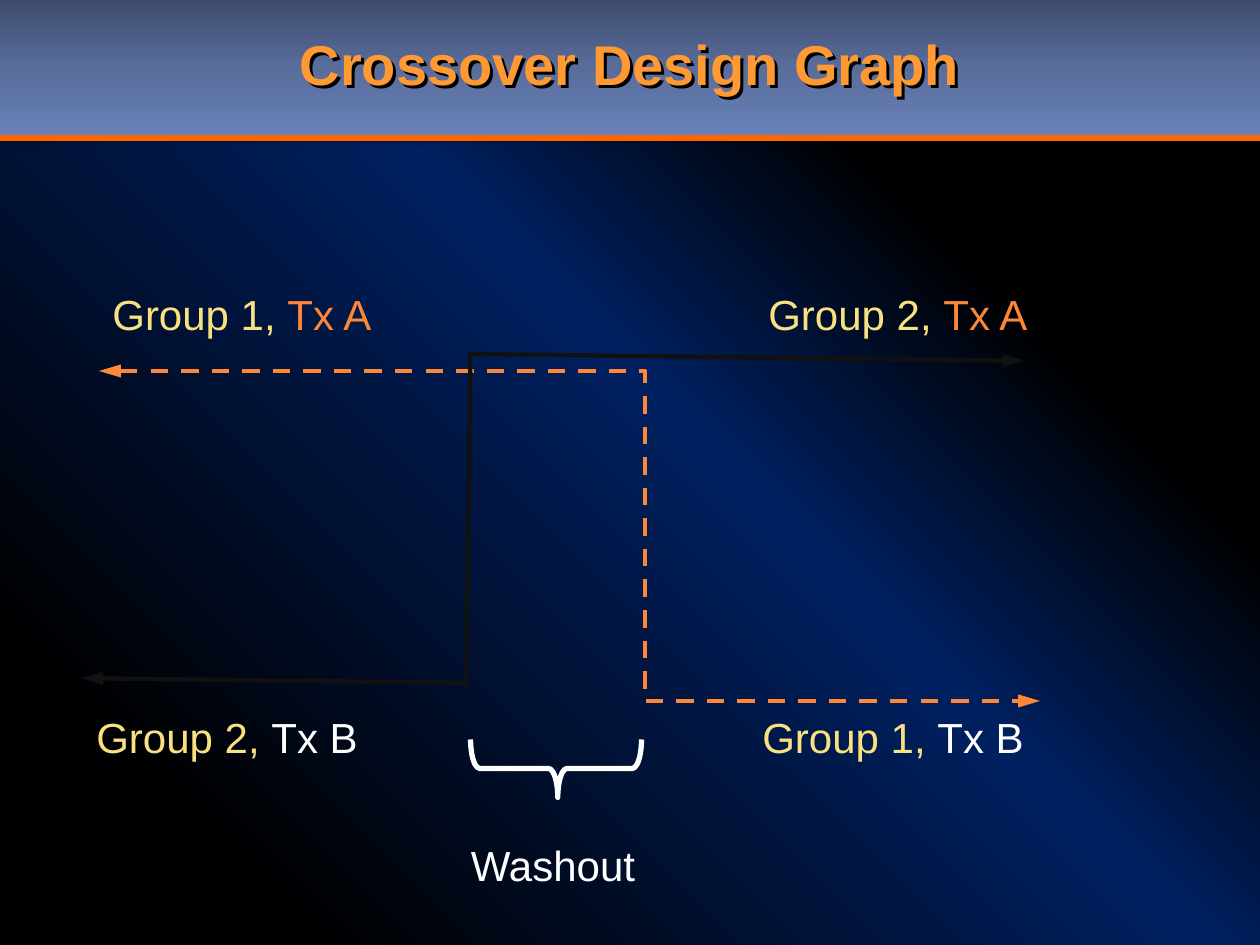
from dataclasses import dataclass

from lxml import etree
from pptx import Presentation
from pptx.dml.color import RGBColor
from pptx.enum.dml import MSO_LINE
from pptx.enum.shapes import MSO_CONNECTOR, MSO_SHAPE
from pptx.enum.text import MSO_ANCHOR, PP_ALIGN
from pptx.oxml import parse_xml
from pptx.oxml.ns import nsdecls, qn
from pptx.util import Emu, Pt

DASH = MSO_LINE.DASH
ELBOW, STRAIGHT = MSO_CONNECTOR.ELBOW, MSO_CONNECTOR.STRAIGHT
RECTANGLE, BRACE = MSO_SHAPE.RECTANGLE, MSO_SHAPE.RIGHT_BRACE
MIDDLE, TOP = MSO_ANCHOR.MIDDLE, MSO_ANCHOR.TOP
CENTER, LEFT = PP_ALIGN.CENTER, PP_ALIGN.LEFT
EMU_PER_PX = 914400 / 126


@dataclass(frozen=True)
class Theme:
    """Colours, gradients, font and type sizes of the slide."""
    font: str = "Arial"
    title_size: int = 32
    label_size: int = 24
    title: str = "FF9933"
    rule: str = "FF6600"
    group: str = "F9E181"
    orange: str = "FE8637"
    white: str = "FFFFFF"
    dark: str = "111111"
    background: tuple = ((14, "000000"), (55, "002060"), (75, "000000"))
    band: tuple = ((0, "3E4D6E"), (50, "596D9C"), (100, "6982B9"))


def px(value):
    """Turn a length in px into EMU."""
    return Emu(round(value * EMU_PER_PX))


def apply(target, values):
    """Set every attribute named in values on target."""
    for name, value in values.items():
        setattr(target, name, value)


def shadow_xml(blur, distance, angle, opacity):
    """Return an effect list with one black outer shadow."""
    return parse_xml(
        f'<a:effectLst {nsdecls("a")}><a:outerShdw blurRad="{Pt(blur)}" '
        f'dist="{Pt(distance)}" dir="{angle * 60000}" algn="tl" rotWithShape="0">'
        f'<a:srgbClr val="000000"><a:alpha val="{opacity * 1000}"/></a:srgbClr>'
        '</a:outerShdw></a:effectLst>')


class SlideBuilder:
    """Draws styled elements on the current slide."""

    def __init__(self, slide, theme):
        """Keep the slide and its theme."""
        self.slide, self.theme = slide, theme

    def gradient(self, fill, owner, stops, angle):
        """Give a fill a linear gradient with any number of stops."""
        fill.gradient()
        fill.gradient_angle = angle
        stop_list = next(owner.iter(qn("a:gsLst")))
        for stop in list(stop_list):
            stop_list.remove(stop)
        for position, color in stops:
            stop = etree.SubElement(stop_list, qn("a:gs"), pos=str(position * 1000))
            etree.SubElement(stop, qn("a:srgbClr"), val=color)

    def background(self):
        """Fill the slide background."""
        self.gradient(self.slide.background.fill, self.slide.element,
                      self.theme.background, 45)

    def band(self, left, top, width, height):
        """Draw the shaded title band."""
        shape = self.slide.shapes.add_shape(
            RECTANGLE, px(left), px(top), px(width), px(height))
        self.gradient(shape.fill, shape.element, self.theme.band, 270)
        shape.line.fill.background()
        shape.element.spPr.append(shadow_xml(3.1, 1.8, 90, 35))

    def stroke(self, line, color, width):
        """Set the colour and width of a line."""
        line.fill.solid()
        line.fill.fore_color.rgb = RGBColor.from_string(color)
        line.width = Pt(width)

    def connector(self, kind, start, end, color, width):
        """Draw a connector without shadow and return it."""
        connector = self.slide.shapes.add_connector(
            kind, *(px(value) for value in (*start, *end)))
        self.stroke(connector.line, color, width)
        etree.SubElement(connector.element.spPr, qn("a:effectLst"))
        return connector

    def crossover(self, start, end, color, bend, dash=None, rotation=0):
        """Draw an elbow connector with an arrowhead at both ends."""
        connector = self.connector(ELBOW, start, end, color, 2.5)
        if dash:
            connector.line.dash_style = dash
        properties = connector.element.spPr
        line = properties.find(qn("a:ln"))
        for tag in ("a:headEnd", "a:tailEnd"):
            etree.SubElement(line, qn(tag), type="triangle", len="lg")
        guides = next(properties.iter(qn("a:avLst")))
        etree.SubElement(guides, qn("a:gd"), name="adj1",
                         fmla=f"val {round(bend * 100000)}")
        if rotation:
            properties.find(qn("a:xfrm")).set("rot", str(round(rotation * 60000)))

    def brace(self, left, top, width, height):
        """Draw a brace that points down."""
        shape = self.slide.shapes.add_shape(
            BRACE, px(left), px(top), px(width), px(height))
        shape.rotation = 90
        shape.adjustments[0], shape.adjustments[1] = 0.16, 0.49
        shape.fill.background()
        self.stroke(shape.line, self.theme.white, 3)
        shape.shadow.inherit = False

    def text(self, box, runs, size, align=LEFT, anchor=TOP, spacing=1.0,
             bold=False, shadow=False):
        """Write one paragraph of coloured runs in a text box."""
        shape = self.slide.shapes.add_textbox(*(px(value) for value in box))
        if shadow:
            shape.element.spPr.append(shadow_xml(0, 2.4, 45, 100))
        apply(shape.text_frame, {"word_wrap": True, "vertical_anchor": anchor})
        paragraph = shape.text_frame.paragraphs[0]
        apply(paragraph, {"alignment": align, "line_spacing": spacing})
        for words, color in runs:
            run = paragraph.add_run()
            run.text = words
            apply(run.font, {"name": self.theme.font, "size": Pt(size), "bold": bold})
            run.font.color.rgb = RGBColor.from_string(color)


def main():
    """Build the crossover design slide."""
    theme = Theme()
    presentation = Presentation()
    apply(presentation, {"slide_width": px(1260), "slide_height": px(945)})
    slide = presentation.slides.add_slide(presentation.slide_layouts[6])
    builder = SlideBuilder(slide, theme)
    builder.background()
    builder.band(0, 0, 1260, 137)
    builder.connector(STRAIGHT, (0, 138), (1260, 138), theme.rule, 3)
    builder.text((0, 0, 1260, 137), [("Crossover Design Graph", theme.title)],
                 theme.title_size, CENTER, MIDDLE, 0.85, True, True)

    builder.crossover((99, 371), (1040, 701), theme.orange, 0.58, DASH)
    builder.crossover((83, 684), (1023, 355), theme.dark, 0.41, rotation=0.7)

    labels = [
        (100, 282, "Group 1, ", "Tx A", theme.orange),
        (756, 282, "Group 2, ", "Tx A", theme.orange),
        (84, 705, "Group 2, ", "Tx B", theme.white),
        (750, 705, "Group 1, ", "Tx B", theme.white),
    ]
    for left, top, group, treatment, color in labels:
        builder.text((left, top, 290, 63), [(group, theme.group), (treatment, color)],
                     theme.label_size)
    builder.brace(527, 683, 58, 171)
    builder.text((408, 833, 290, 63), [("Washout", theme.white)],
                 theme.label_size, CENTER)
    presentation.save("out.pptx")


if __name__ == "__main__":
    main()
